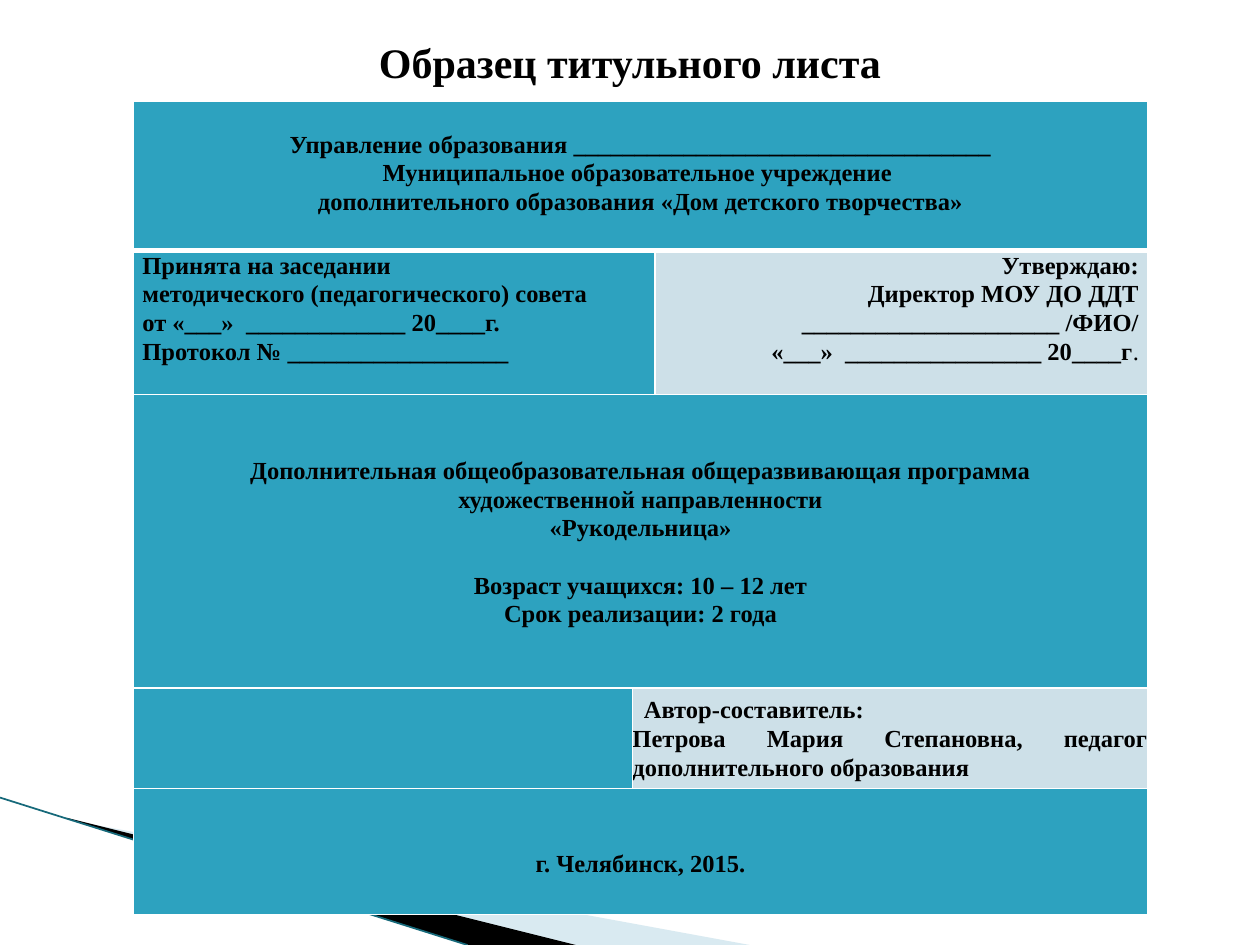
import pptx
import pptx.util
import pptx.dml.color
import pptx.enum.shapes
import pptx.enum.text
import pptx.oxml
from lxml import etree

Inches, Pt = pptx.util.Inches, pptx.util.Pt
ALIGN = pptx.enum.text.PP_ALIGN
ANCHOR = pptx.enum.text.MSO_ANCHOR
A = "http://schemas.openxmlformats.org/drawingml/2006/main"
FONT = "Times New Roman"
TEAL, PALE, BLACK, WHITE = "2DA2BF", "CDE0E8", "000000", "FFFFFF"

# Content
TITLE = "Образец титульного листа"
INSTITUTION = [
    "Управление образования __________________________________",
    "Муниципальное образовательное учреждение ",
    "дополнительного образования «Дом детского творчества»",
]
ACCEPTED = [
    "Принята на заседании",
    "методического (педагогического) совета",
    "от «___»  _____________ 20____г.",
    "Протокол № __________________",
]
APPROVED = [
    "Утверждаю:",
    "Директор МОУ ДО ДДТ",
    "_____________________ /ФИО/",
    "«___»  ________________ 20____г",
]
PROGRAMME = [
    "Дополнительная общеобразовательная общеразвивающая программа",
    "художественной направленности",
    "«Рукодельница»",
    "Возраст учащихся: 10 – 12 лет",
    "Срок реализации: 2 года",
]
AUTHOR = [
    "Автор-составитель: ",
    "Петрова Мария Степановна, педагог дополнительного образования",
]
CITY = ["г. Челябинск, 2015."]

COLUMNS = [3.96, 0.17, 3.91]
ROWS = [1.19, 1.14, 2.33, 0.8, 1.0]
# row, first column, last column, fill, lines, alignment, top inset
CELLS = [
    (0, 0, 2, TEAL, INSTITUTION, ALIGN.CENTER, 0.23),
    (1, 0, 1, TEAL, ACCEPTED, ALIGN.LEFT, 0),
    (1, 2, 2, PALE, APPROVED, ALIGN.RIGHT, 0),
    (2, 0, 2, TEAL, PROGRAMME, ALIGN.CENTER, 0.49),
    (3, 0, 0, TEAL, [], ALIGN.LEFT, 0),
    (3, 1, 2, PALE, AUTHOR, ALIGN.JUSTIFY, 0),
    (4, 0, 2, TEAL, CITY, ALIGN.CENTER, 0.48),
]

# Decorative wedges: fill, opacity in percent, corners
WEDGES = [
    ("A0CBDC", 40, [(0.55, 6.51), (5.95, 7.5), (4.56, 7.5), (0.55, 6.5)]),
    (BLACK, 100, [(0.53, 6.49), (4.57, 7.5), (3.72, 7.5), (0.54, 6.5)]),
]


def rgb(value):
    return pptx.dml.color.RGBColor.from_string(value)


def style_font(font, size):
    font.name, font.size, font.bold = FONT, Pt(size), True
    font.color.rgb = rgb(BLACK)


def add_wedge(shapes, color, opacity, corners):
    points = [(Inches(x), Inches(y)) for x, y in corners]
    builder = shapes.build_freeform(*points[0])
    builder.add_line_segments(points[1:], close=True)
    wedge = builder.convert_to_shape()
    wedge.shadow.inherit = False
    wedge.line.fill.background()
    wedge.fill.solid()
    wedge.fill.fore_color.rgb = rgb(color)
    if opacity < 100:
        fill_color = wedge.fill._xPr.find(f".//{{{A}}}srgbClr")
        etree.SubElement(fill_color, f"{{{A}}}alpha", val=str(opacity * 1000))


def add_borders(cell, row):
    properties = cell._tc.get_or_add_tcPr()
    widths = {"L": 1, "R": 1, "T": 3 if row == 1 else 1, "B": 3 if row == 0 else 1}
    for side, width in widths.items():
        properties.append(pptx.oxml.parse_xml(
            f'<a:ln{side} xmlns:a="{A}" w="{Pt(width)}"><a:solidFill>'
            f'<a:srgbClr val="{WHITE}"/></a:solidFill></a:ln{side}>'))


def fill_cell(cell, color, lines, alignment, top):
    cell.fill.solid()
    cell.fill.fore_color.rgb = rgb(color)
    side = 0 if lines is AUTHOR else 0.07
    cell.margin_left = cell.margin_right = Inches(side)
    cell.margin_top, cell.margin_bottom = Inches(top), 0
    cell.text = "\n".join(lines)
    for paragraph in cell.text_frame.paragraphs:
        paragraph.alignment = alignment
        paragraph.line_spacing = 1.06
        style_font(paragraph.font, 14)


presentation = pptx.Presentation()
presentation.slide_width, presentation.slide_height = Inches(10), Inches(7.5)
slide = presentation.slides.add_slide(presentation.slide_layouts[5])

# Corner decoration
for wedge_spec in WEDGES:
    add_wedge(slide.shapes, *wedge_spec)
edge = slide.shapes.add_connector(
    pptx.enum.shapes.MSO_CONNECTOR.STRAIGHT,
    Inches(0), Inches(6.33), Inches(3.71), Inches(7.5))
edge.line.color.rgb = rgb("16697A")
edge.line.width = Pt(1)
etree.SubElement(edge._element.spPr, f"{{{A}}}effectLst")

# Title page form
form = slide.shapes.add_table(
    len(ROWS), len(COLUMNS), Inches(1.06), Inches(0.8),
    Inches(sum(COLUMNS)), Inches(sum(ROWS))).table
form.first_row = form.horz_banding = False
for column, width in zip(form.columns, COLUMNS):
    column.width = Inches(width)
for row, height in zip(form.rows, ROWS):
    row.height = Inches(height)
for row, first, last, color, lines, alignment, top in CELLS:
    if last > first:
        form.cell(row, first).merge(form.cell(row, last))
    for column in range(first, last + 1):
        add_borders(form.cell(row, column), row)
    fill_cell(form.cell(row, first), color, lines, alignment, top)

# Details of single paragraphs
approval_date = form.cell(1, 2).text_frame.paragraphs[-1]
full_stop = approval_date.add_run()
full_stop.text = "."
full_stop.font.bold = False
form.cell(2, 0).text_frame.paragraphs[3].space_before = Pt(16.4)
author = form.cell(3, 1)
author.vertical_anchor = ANCHOR.MIDDLE
author.text_frame.paragraphs[0]._p.get_or_add_pPr().set("indent", str(Inches(0.09)))

# Title
title = slide.shapes.title
title.left, title.top = Inches(0.5), Inches(0.3)
title.width, title.height = Inches(9), Inches(0.38)
title.text_frame.text = TITLE
title.text_frame.vertical_anchor = ANCHOR.MIDDLE
title.text_frame.paragraphs[0].alignment = ALIGN.CENTER
style_font(title.text_frame.paragraphs[0].font, 24)

presentation.save("out.pptx")
